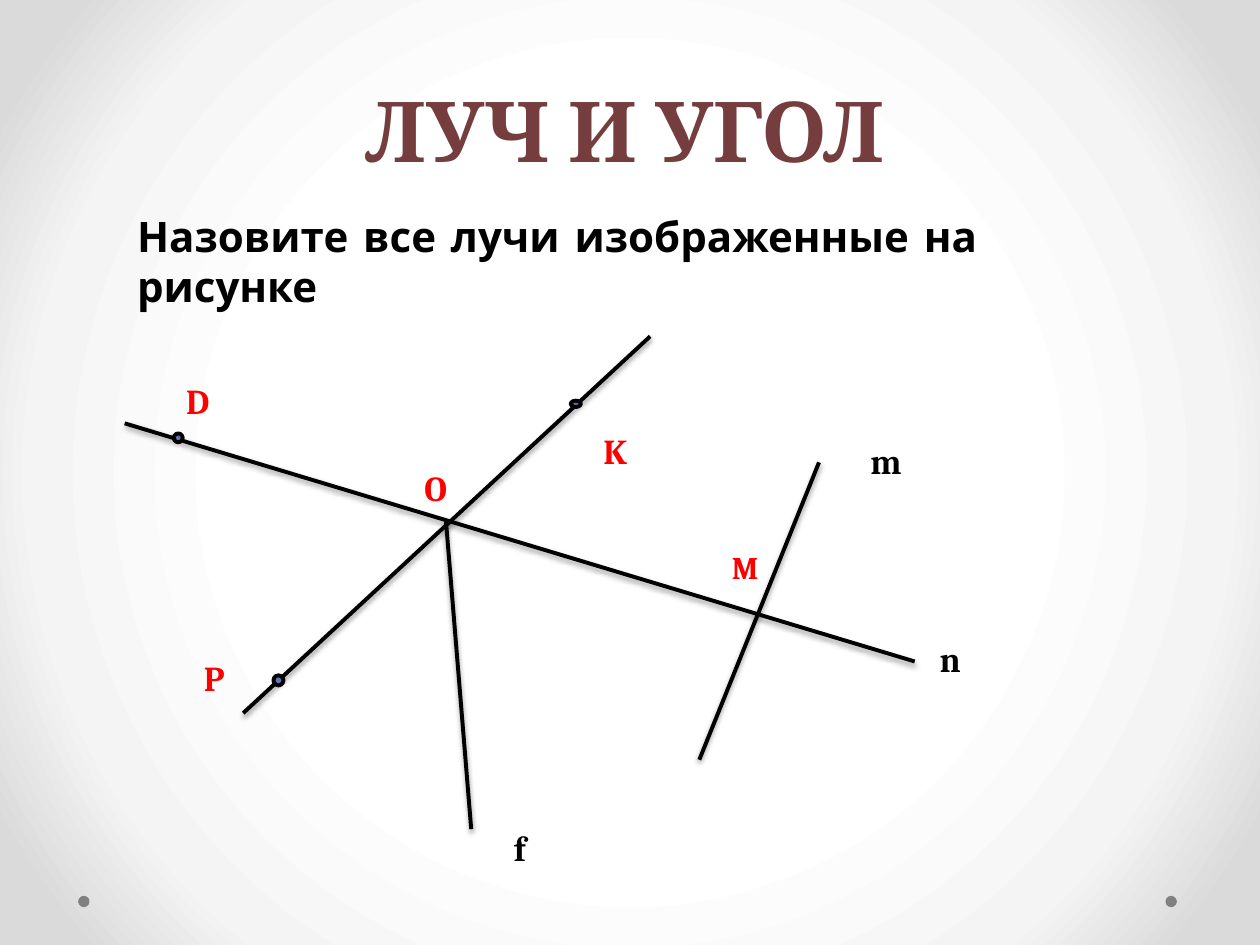
from dataclasses import dataclass

from lxml import etree
from pptx import Presentation
from pptx import util as u
from pptx.dml.color import RGBColor
from pptx.enum import shapes, text
from pptx.oxml import parse_xml
from pptx.oxml.ns import nsdecls, qn


@dataclass(frozen=True)
class Theme:
    heading_font: str = "Cambria"
    body_font: str = "Comic Neue"
    title_color: str = "753D3D"
    ink: str = "000000"
    point_name: str = "FF0000"
    point_fill: str = "6076B4"
    ornament: str = "808080"
    title_size: int = 48
    task_size: int = 24
    label_size: int = 20
    small_label_size: int = 18
    stroke: float = 2.25
    glow: tuple = ((50, "FFFFFF"), (76, "F4F4F4"), (92, "DADADA"))


THEME = Theme()


def inches(*values):
    return [u.Inches(value) for value in values]


def paint_background(slide):
    """Radial gradient, white in the middle and grey at the corners."""
    slide.background.fill.gradient()
    linear = slide._element.find(".//" + qn("a:gradFill"))
    stops = "".join(
        f'<a:gs pos="{position * 1000}"><a:srgbClr val="{color}"/></a:gs>'
        for position, color in THEME.glow)
    radial = parse_xml(
        f'<a:gradFill {nsdecls("a")} rotWithShape="1"><a:gsLst>{stops}</a:gsLst>'
        '<a:path path="circle"><a:fillToRect l="50000" t="50000" r="50000" b="50000"/>'
        '</a:path></a:gradFill>')
    linear.getparent().replace(linear, radial)


def add_text(slide, wording, box, size, color, font=THEME.heading_font, wrap=False):
    frame = slide.shapes.add_textbox(*inches(*box)).text_frame
    frame.text = wording
    frame.word_wrap = wrap
    frame.auto_size = text.MSO_AUTO_SIZE.SHAPE_TO_FIT_TEXT
    style = frame.paragraphs[0].runs[0].font
    style.name, style.size, style.bold = font, u.Pt(size), True
    style.color.rgb = RGBColor.from_string(color)


def add_dot(slide, box, fill, outlined=True):
    dot = slide.shapes.add_shape(shapes.MSO_SHAPE.OVAL, *inches(*box))
    dot.shadow.inherit = False
    dot.fill.solid()
    dot.fill.fore_color.rgb = RGBColor.from_string(fill)
    if outlined:
        dot.line.color.rgb = RGBColor.from_string(THEME.ink)
        dot.line.width = u.Pt(THEME.stroke)
    else:
        dot.line.fill.background()


def add_ray(slide, start, end):
    ray = slide.shapes.add_connector(
        shapes.MSO_CONNECTOR.STRAIGHT, *inches(*start, *end))
    ray.line.color.rgb = RGBColor.from_string(THEME.ink)
    ray.line.width = u.Pt(THEME.stroke)
    # Soft shadow straight below the line
    effects = etree.SubElement(ray._element.spPr, qn("a:effectLst"))
    shadow = etree.SubElement(
        effects, qn("a:outerShdw"), blurRad=str(u.Pt(3.1)), dist=str(u.Pt(1.6)),
        dir="5400000", rotWithShape="0")
    color = etree.SubElement(shadow, qn("a:srgbClr"), val=THEME.ink)
    etree.SubElement(color, qn("a:alpha"), val="38000")


def main():
    deck = Presentation()
    deck.slide_width, deck.slide_height = inches(10, 7.5)
    slide = deck.slides.add_slide(deck.slide_layouts[6])

    # Backdrop with a dot in each lower corner
    paint_background(slide)
    for left in (9.25, 0.62):
        add_dot(slide, (left, 7.11, 0.09, 0.09), THEME.ornament, outlined=False)

    # Title and task
    add_text(slide, "ЛУЧ И УГОЛ", (2.8, 0.57, 4.47, 0.91),
             THEME.title_size, THEME.title_color)
    add_text(slide, "Назовите все лучи изображенные на рисунке", (0.99, 1.62, 7.8, 0.5),
             THEME.task_size, THEME.ink, THEME.body_font, wrap=True)

    # Lines Dn, PK, Of and Mm
    for start, end in (
        ((0.99, 3.36), (7.26, 5.25)),
        ((1.93, 5.66), (5.16, 2.67)),
        ((3.54, 4.14), (3.74, 6.58)),
        ((6.5, 3.67), (5.55, 6.03)),
    ):
        add_ray(slide, start, end)

    # Names of the rays in black, of the points in red
    for name, left, top, width in (
        ("m", 6.81, 3.44, 0.45), ("n", 7.36, 5.01, 0.37), ("f", 3.98, 6.51, 0.31),
    ):
        add_text(slide, name, (left, top, width, 0.44), THEME.label_size, THEME.ink)
    add_text(slide, "M", (5.71, 4.3, 0.45, 0.4),
             THEME.small_label_size, THEME.point_name)
    for name, left, top, width in (
        ("O", 3.27, 3.65, 0.44), ("K", 4.69, 3.36, 0.42),
        ("P", 1.52, 5.16, 0.37), ("D", 1.38, 2.96, 0.44),
    ):
        add_text(slide, name, (left, top, width, 0.44),
                 THEME.label_size, THEME.point_name)

    # Points D, P and K
    for point in (
        (1.38, 3.44, 0.07, 0.07), (2.17, 5.36, 0.08, 0.08), (4.53, 3.18, 0.08, 0.05),
    ):
        add_dot(slide, point, THEME.point_fill)

    deck.save("out.pptx")


if __name__ == "__main__":
    main()
